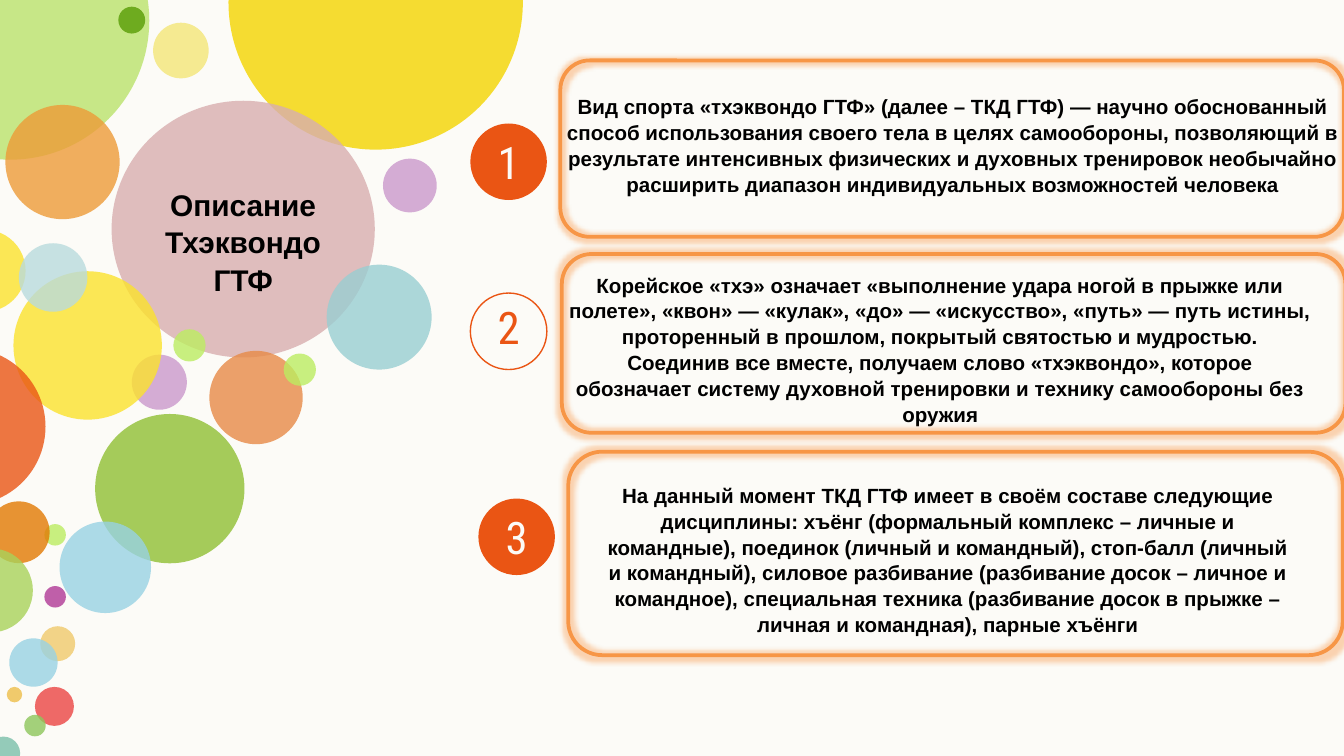
from lxml.etree import SubElement
from pptx import Presentation
from pptx.dml.color import RGBColor
from pptx.enum.shapes import MSO_SHAPE
from pptx.enum.text import MSO_ANCHOR, PP_ALIGN
from pptx.oxml.ns import qn
from pptx.util import Pt

PAPER = RGBColor(0xFC, 0xFB, 0xF7)
BLACK = RGBColor(0x00, 0x00, 0x00)
RED = RGBColor(0xEA, 0x55, 0x14)
FRAME = RGBColor(0xF7, 0x96, 0x46)
LEAF = RGBColor(0xBA, 0xE3, 0x6B)
MOSS = RGBColor(0x6E, 0xAB, 0x1F)
AMBER = RGBColor(0xED, 0x9B, 0x38)
CREAM = RGBColor(0xF5, 0xEA, 0x91)
GOLD = RGBColor(0xF4, 0xD5, 0x00)
ROSE = RGBColor(0xD8, 0xAE, 0xAF)
TEAL = RGBColor(0x99, 0xCE, 0xD2)
LILAC = RGBColor(0xCB, 0x99, 0xCC)
COPPER = RGBColor(0xE7, 0x8A, 0x47)
GRASS = RGBColor(0xA5, 0xCB, 0x5A)
LIME = RGBColor(0xBC, 0xED, 0x61)
LEMON = RGBColor(0xFB, 0xE2, 0x2D)
PLUM = RGBColor(0xB0, 0x38, 0x96)
SAND = RGBColor(0xF0, 0xCA, 0x6C)
JADE = RGBColor(0x7B, 0xBF, 0xAA)
CORAL = RGBColor(0xEB, 0x45, 0x44)
FERN = RGBColor(0x8D, 0xC6, 0x5B)
SKY = RGBColor(0x98, 0xD2, 0xE3)
MIST = RGBColor(0xB9, 0xDB, 0xDD)
RUST = RGBColor(0xE2, 0x79, 0x02)
PEAR = RGBColor(0xA9, 0xD2, 0x5A)

TITLE = {"name": "Arial", "size": Pt(16), "bold": True}
BODY = {"name": "Arial", "size": Pt(11), "bold": True}
DIGIT = {"name": "Roboto Condensed", "size": Pt(24), "bold": False}

deck = Presentation()
deck.slide_width, deck.slide_height = Pt(720), Pt(405)
slide = deck.slides.add_slide(deck.slide_layouts[6])
slide.background.fill.solid()
slide.background.fill.fore_color.rgb = PAPER


def draw(kind, box, fill=None, line=None, width=0.75, alpha=100):
    shape = slide.shapes.add_shape(kind, *map(Pt, box))
    shape.shadow.inherit = False
    if fill is None:
        shape.fill.background()
    else:
        shape.fill.solid()
        shape.fill.fore_color.rgb = fill
        if alpha < 100:
            tint = shape.fill._xPr.find(".//" + qn("a:srgbClr"))
            SubElement(tint, qn("a:alpha"), val=str(alpha * 1000))
    if line is None:
        shape.line.fill.background()
    else:
        shape.line.color.rgb = line
        shape.line.width = Pt(width)
    return shape


def write(shape, lines, style, color, pads, space=1.0, anchor=MSO_ANCHOR.TOP):
    frame = shape.text_frame
    frame.word_wrap = True
    frame.vertical_anchor = anchor
    for side, pad in zip(("left", "top", "right", "bottom"), pads):
        setattr(frame, "margin_" + side, Pt(pad))
    for i, text in enumerate(lines):
        para = frame.paragraphs[0] if i == 0 else frame.add_paragraph()
        para.alignment = PP_ALIGN.CENTER
        para.line_spacing = space
        run = para.add_run()
        run.text = text
        for key, value in style.items():
            setattr(run.font, key, value)
        run.font.color.rgb = color


dots = [
    (-69, -63.4, 149, LEAF, 80), (63.4, 3.6, 14.4, MOSS, 100),
    (2.9, 56.2, 61.2, AMBER, 80), (82, 12.2, 29.8, CREAM, 100),
    (122.4, -77.5, 157.7, GOLD, 80), (59.8, 54, 141, ROSE, 80),
    (175, 141.8, 56.2, TEAL, 80), (205.2, 85, 28.8, LILAC, 80),
    (112.2, 188, 50, COPPER, 80), (51, 221.8, 80, GRASS, 100),
    (152, 189.4, 17.3, LIME, 80), (92.9, 176.4, 17.3, LIME, 80),
    (70.6, 190, 29.5, LILAC, 80), (7.2, 145.3, 79.5, LEMON, 80),
    (-30.2, 123.1, 43.9, LEMON, 80), (23.8, 280.8, 11.5, LIME, 80),
    (23.8, 314, 11.5, PLUM, 80), (21.6, 335.5, 18.7, SAND, 80),
    (3.6, 368, 8.3, SAND, 100), (-7.2, 394.6, 18, JADE, 80),
    (18.7, 368, 20.9, CORAL, 80), (13, 383, 11.5, FERN, 80),
    (5, 342, 25.9, SKY, 80), (10.1, 130.3, 36.7, MIST, 80),
    (31.9, 279.4, 49, SKY, 80), (-6.5, 268.6, 33.1, RUST, 80),
    (-27.4, 293.8, 45, PEAR, 80), (-59.8, 186.5, 84.2, RED, 80),
]
for x, y, size, color, alpha in dots:
    high = 137.5 if color == ROSE else size
    dot = draw(MSO_SHAPE.OVAL, (x, y, size, high), color, alpha=alpha)
    if color == ROSE:
        write(dot, ["Описание", "Тхэквондо", "ГТФ"], TITLE, BLACK,
              (7.2, 16.2, 7.2, 3.6), 1.05, MSO_ANCHOR.MIDDLE)

marks = [
    ("1", 252, 66.2, 5.8, RED, None, PAPER),
    ("2", 252, 157, 3.6, None, RED, RED),
    ("3", 256.3, 267.1, 5.8, RED, None, PAPER),
]
for digit, x, y, drop, fill, line, ink in marks:
    draw(MSO_SHAPE.OVAL, (x, y, 41, 41), fill, line)
    box = slide.shapes.add_textbox(*map(Pt, (x, y + drop, 41, 28.8)))
    write(box, [digit], DIGIT, ink, (0, 0, 0, 0))

notes = [
    ("Вид спорта «тхэквондо ГТФ» (далее – ТКД ГТФ) — научно обоснованный "
     "способ использования своего тела в целях самообороны, позволяющий в "
     "результате интенсивных физических и духовных тренировок необычайно "
     "расширить диапазон индивидуальных возможностей человека",
     (297.4, 49.7, 426.2, 79.2), (0, 0, 0, 0), (300.2, 32.4, 419.8, 94.5)),
    ("Корейское «тхэ» означает «выполнение удара ногой в прыжке или полете», "
     "«квон» — «кулак», «до» — «искусство», «путь» — путь истины, "
     "проторенный в прошлом, покрытый святостью и мудростью. Соединив все "
     "вместе, получаем слово «тхэквондо», которое обозначает систему "
     "духовной тренировки и технику самообороны без оружия",
     (297.4, 141.8, 412.6, 73.4), (7.2, 3.6, 7.2, 3.6),
     (301, 136.1, 419.8, 95.8)),
    ("На данный момент ТКД ГТФ имеет в своём составе следующие дисциплины: "
     "хъёнг (формальный комплекс – личные и командные), поединок (личный и "
     "командный), стоп-балл (личный и командный), силовое разбивание "
     "(разбивание досок – личное и командное), специальная техника "
     "(разбивание досок в прыжке – личная и командная), парные хъёнги",
     (314.6, 241.2, 386.6, 100.8), (7.2, 16.8, 7.2, 3.6),
     (304.4, 242, 414.9, 109)),
]
for text, place, pads, edge in notes:
    box = slide.shapes.add_textbox(*map(Pt, place))
    write(box, [text], BODY, BLACK, pads, 1.05)
    frame = draw(MSO_SHAPE.ROUNDED_RECTANGLE, edge, None, FRAME, 2)
    effect = frame._element.spPr.find(qn("a:effectLst"))
    glow = SubElement(effect, qn("a:glow"), rad=str(Pt(5)))
    tint = SubElement(glow, qn("a:srgbClr"), val=str(FRAME))
    SubElement(tint, qn("a:alpha"), val="40000")

deck.save("out.pptx")
